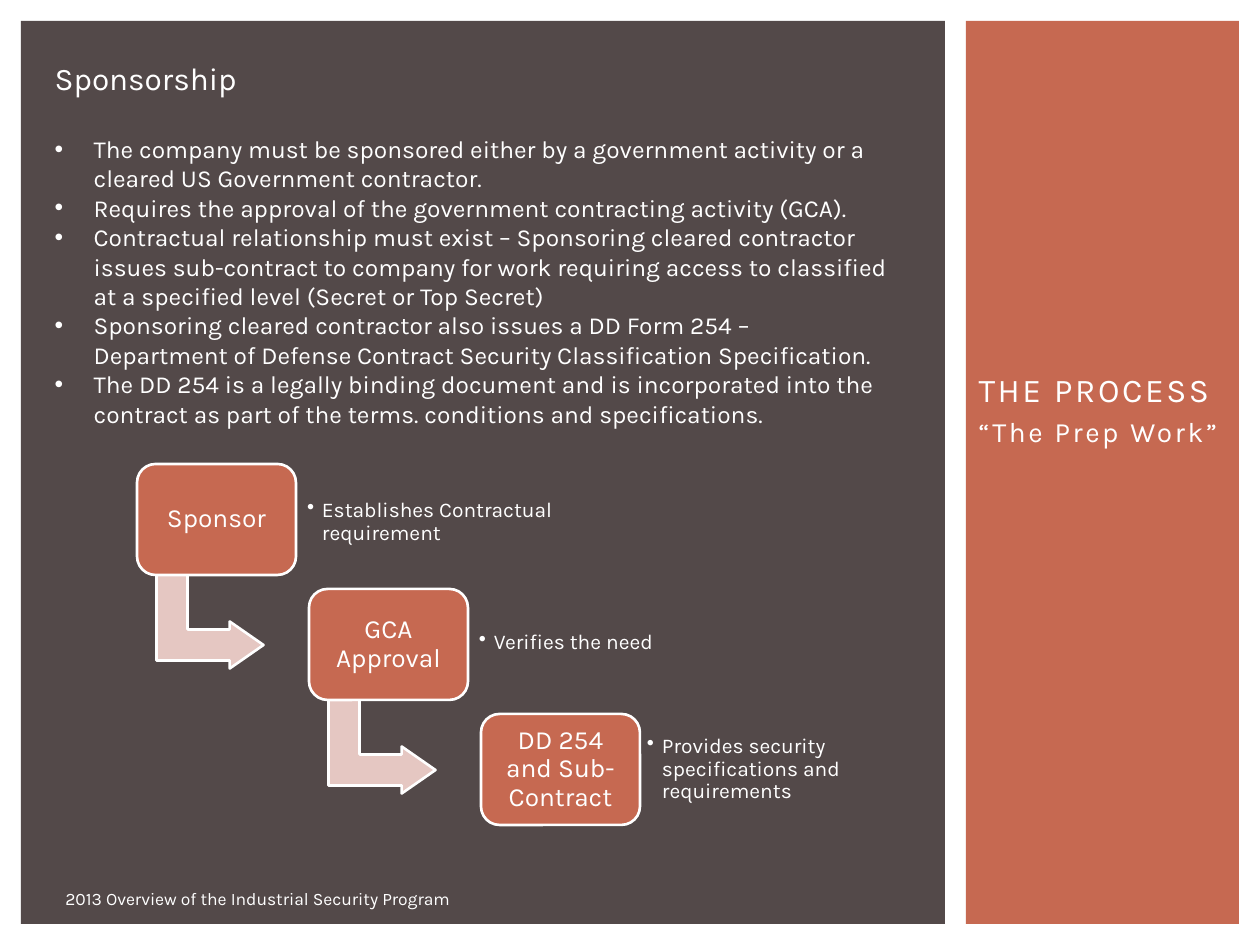
from lxml import etree
from pptx import Presentation
from pptx.dml.color import RGBColor
from pptx.enum.shapes import MSO_SHAPE
from pptx.enum.text import MSO_ANCHOR, MSO_AUTO_SIZE, PP_ALIGN
from pptx.oxml.ns import qn
from pptx.util import Inches, Pt

RECT, ROUND = MSO_SHAPE.RECTANGLE, MSO_SHAPE.ROUNDED_RECTANGLE
BENT = MSO_SHAPE.BENT_UP_ARROW
TOP, MIDDLE = MSO_ANCHOR.TOP, MSO_ANCHOR.MIDDLE
LEFT, CENTER = PP_ALIGN.LEFT, PP_ALIGN.CENTER
NO_FIT = MSO_AUTO_SIZE.NONE

WHITE = RGBColor(0xFF, 0xFF, 0xFF)
RUST = RGBColor(0xC6, 0x69, 0x51)
BROWN = RGBColor(0x53, 0x49, 0x49)
PINK = RGBColor(0xE5, 0xC7, 0xC2)
FONT = "Karla"
SCALE = Inches(1) / 126

BULLETS = [
    "The company must be sponsored either by a government activity or a cleared US Government contractor.",
    "Requires the approval of the government contracting activity (GCA).",
    "Contractual relationship must exist – Sponsoring cleared contractor issues sub-contract to company "
    "for work requiring access to classified at a specified level (Secret or Top Secret)",
    "Sponsoring cleared contractor also issues a DD Form 254 – Department of Defense Contract Security "
    "Classification Specification.",
    "The DD 254 is a legally binding document and is incorporated into the contract as part of the terms. "
    "conditions and specifications.",
]
STEPS = [
    ("Sponsor", "Establishes Contractual requirement", (163, 14, 282, 89)),
    ("GCA Approval", "Verifies the need", (163, 9, 242, 89)),
    ("DD 254 and Sub-Contract", "Provides security specifications and requirements", (159, 11, 242, 89)),
]


def px(n):
    """Turn px into EMU."""
    return round(n * SCALE)


def place(sp, box):
    """Move a shape to a px box."""
    sp.left, sp.top, sp.width, sp.height = map(px, box)


def frame(sp, anchor=TOP, inset=None):
    """Set up a shape's text frame."""
    tf = sp.text_frame
    tf.word_wrap = True
    tf.auto_size = NO_FIT
    tf.vertical_anchor = anchor
    if inset is not None:
        tf.margin_left = tf.margin_right = tf.margin_top = tf.margin_bottom = px(inset)
    return tf


def write(tf, text, size, align=LEFT, before=0, after=0, spacing=1.0, tracking=None, indent=0):
    """Add a paragraph, bulleted when it has an indent."""
    p = tf.paragraphs[0] if not tf.text else tf.add_paragraph()
    p.alignment, p.line_spacing = align, spacing
    p.space_before, p.space_after = Pt(before), Pt(after)
    pPr = p._p.get_or_add_pPr()
    pPr.set("marL", str(px(indent)))
    pPr.set("indent", str(-px(indent)))
    if indent:
        etree.SubElement(pPr, qn("a:buChar")).set("char", "•")
    else:
        etree.SubElement(pPr, qn("a:buNone"))
    r = p.add_run()
    r.text = text
    r.font.name, r.font.size, r.font.color.rgb = FONT, Pt(size), WHITE
    if tracking:
        r._r.get_or_add_rPr().set("spc", str(tracking))


def add_block(s, kind, box, fill, line=False):
    """Add a filled preset shape."""
    sp = s.shapes.add_shape(kind, *map(px, box))
    sp.shadow.inherit = False
    sp.fill.solid()
    sp.fill.fore_color.rgb = fill
    if line:
        sp.line.color.rgb, sp.line.width = WHITE, Pt(1.5)
    else:
        sp.line.fill.background()
    return sp


def add_text(s, box, anchor=TOP, inset=None):
    """Add a text box and return its frame."""
    return frame(s.shapes.add_textbox(*map(px, box)), anchor, inset)


def add_panel(s, box, fill):
    """Add a panel behind everything else."""
    sp = add_block(s, RECT, box, fill)
    s.shapes._spTree.insert(2, sp._element)


def side_panel(s, x, y, w, h):
    """Fill the right panel with the slide title."""
    add_panel(s, (x, y, w, h), RUST)
    title = s.shapes.title
    place(title, (x, y + 262, w, 252))
    tf = frame(title, MIDDLE)
    write(tf, "THE PROCESS", 19, before=4, tracking=150)
    write(tf, "“The Prep Work”", 16, before=3, tracking=150)


def main_panel(s, x, y, w, h):
    """Fill the left panel with list, steps and footer."""
    add_panel(s, (x, y, w, h), BROWN)
    body = s.placeholders[1]
    place(body, (x + 21, y + 32, 859, 454))
    tf = frame(body)
    write(tf, "Sponsorship", 18, after=21)
    for text in BULLETS:
        write(tf, text, 14, indent=39)
    for i, step in enumerate(STEPS):
        add_step(s, x + 116 + 172 * i, y + 443 + 125 * i, *step, arrow=i < len(STEPS) - 1)
    write(add_text(s, (x + 32, y + h - 42, 724, 34)), "2013 Overview of the Industrial Security Program", 10)


def add_step(s, x, y, label, note, note_box, arrow):
    """Add one step with its note and the arrow to the next."""
    if arrow:
        sp = add_block(s, BENT, (x + 26, y + 104, 94, 107), PINK, line=True)
        sp.rotation = 90
        for i, value in enumerate((0.33, 0.25, 0.36)):
            sp.adjustments[i] = value
    sp = add_block(s, ROUND, (x, y, 159, 111), RUST, line=True)
    write(frame(sp, MIDDLE, 14), label, 15, CENTER, spacing=0.9)
    dx, dy, w, h = note_box
    write(add_text(s, (x + dx, y + dy, w, h), MIDDLE, 7), note, 12, spacing=0.9, indent=15)


def main():
    """Build and save the slide."""
    prs = Presentation()
    prs.slide_width, prs.slide_height = Inches(10), Inches(7.5)
    s = prs.slides.add_slide(prs.slide_layouts[1])
    side_panel(s, 966, 21, 273, 903)
    main_panel(s, 21, 21, 924, 903)
    prs.save("out.pptx")


if __name__ == "__main__":
    main()
